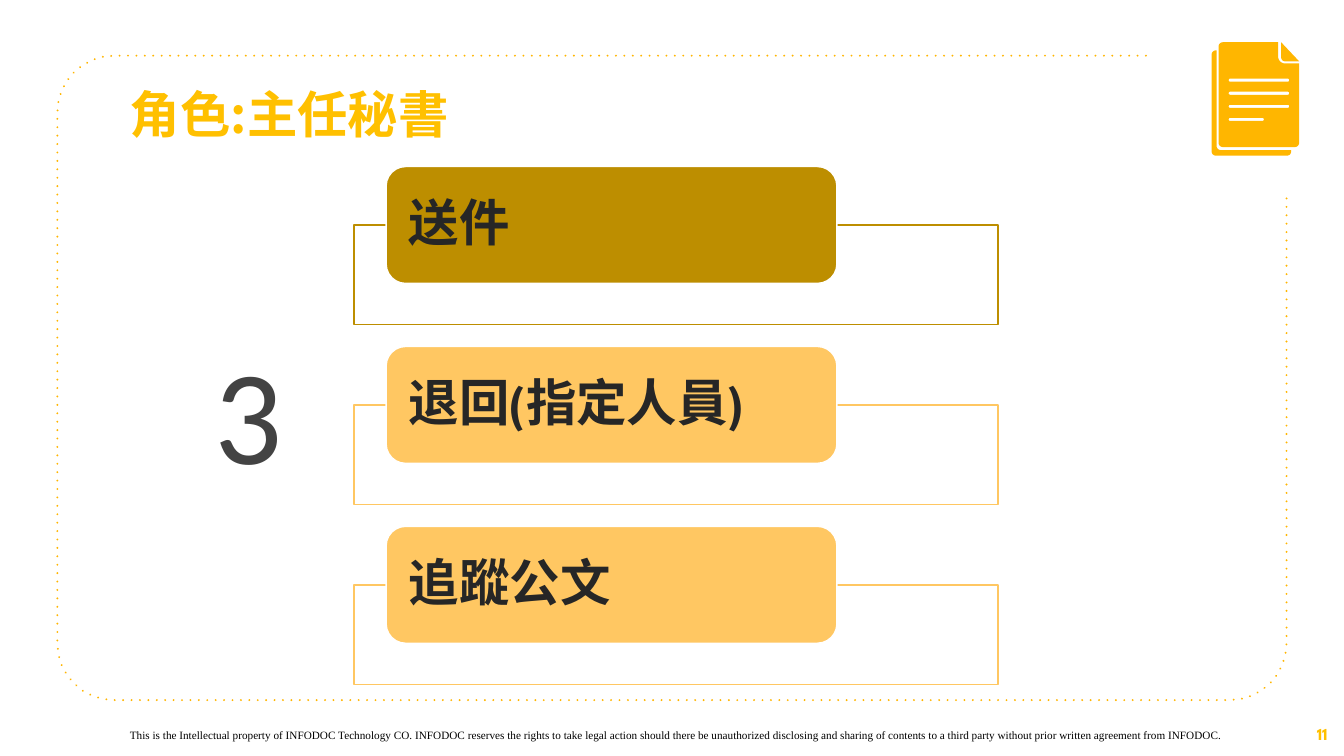
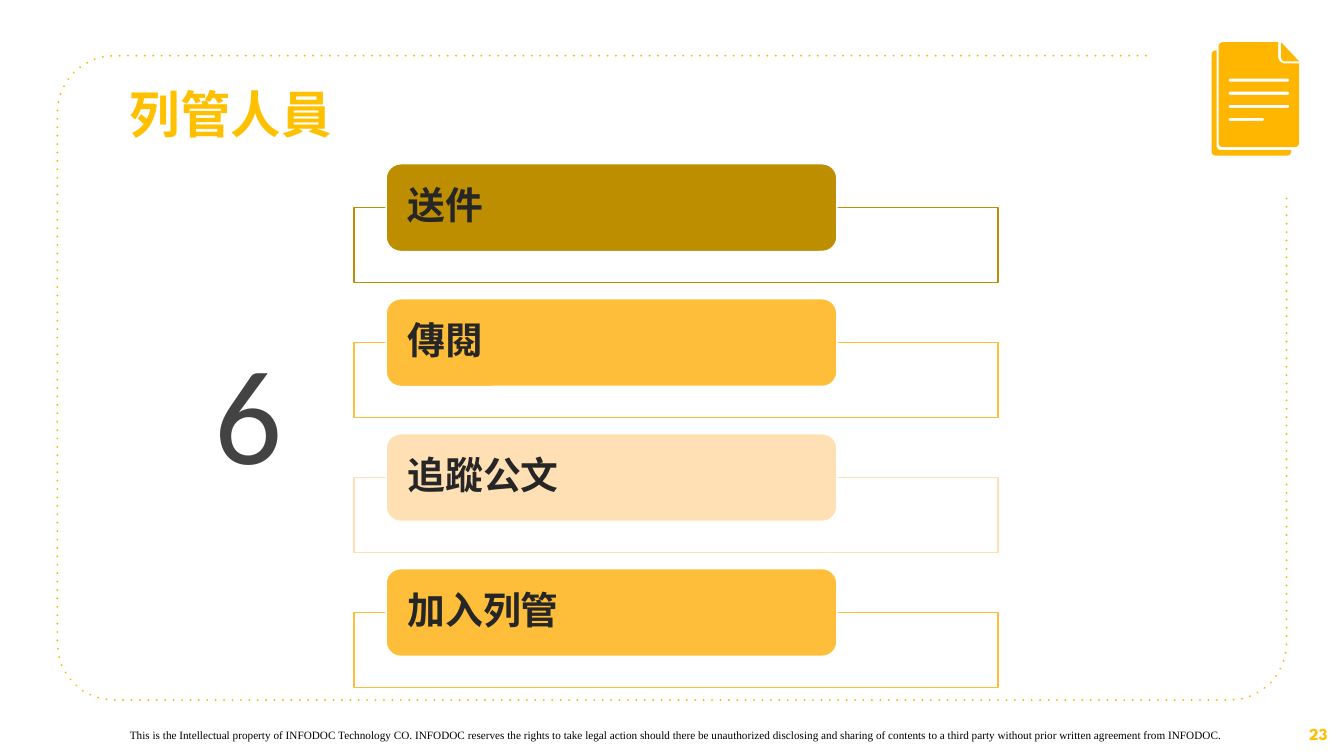
import math
from dataclasses import dataclass

from lxml import etree
from pptx import Presentation
from pptx.dml.color import RGBColor
from pptx.enum.shapes import MSO_SHAPE
from pptx.enum.text import MSO_ANCHOR, PP_ALIGN
from pptx.oxml.ns import qn
from pptx.util import Pt

RECTANGLE = MSO_SHAPE.RECTANGLE
ROUNDED = MSO_SHAPE.ROUNDED_RECTANGLE
TOP, MIDDLE = MSO_ANCHOR.TOP, MSO_ANCHOR.MIDDLE
LEFT, CENTER, RIGHT = PP_ALIGN.LEFT, PP_ALIGN.CENTER, PP_ALIGN.RIGHT


@dataclass(frozen=True)
class Theme:
    accent: str = "FFB600"
    title: str = "FFC000"
    white: str = "FFFFFF"
    black: str = "000000"
    ink: str = "262626"
    grey: str = "434343"
    dark_gold: str = "BD8E00"
    gold: str = "FFBE39"
    light_gold: str = "FFC762"
    cream: str = "FFE0B4"
    heading_font: str = "Noto Sans CJK SC"
    card_font: str = "League Spartan"
    count_font: str = "Calibri"
    footer_font: str = "Times New Roman"
    title_size: float = 36
    count_size: float = 96
    page_size: float = 12
    footer_size: float = 8


THEME = Theme()
SLIDE_SIZE = (960, 540)

# Boxes: left, top, width, height in points
FRAME_BOX = (41, 39.8, 878, 460.3)
ICON_BOX = (865.5, 30.2, 62.5, 81)
TITLE_BOX = (85.7, 60.5, 380, 53.3)
COUNT_BOX = (139.7, 220.3, 75.6, 146.2)
STACK_BOX = (252.8, 116, 460, 376)
FOOTER_BOX = (85.7, 517, 800, 17.3)
PAGE_BOX = (739.5, 509.8, 216, 28.8)

FOOTER = ("This is the Intellectual property of INFODOC Technology CO. INFODOC reserves "
          "the rights to take legal action should there be unauthorized disclosing and "
          "sharing of contents to a third party without prior written agreement from INFODOC.")

# Page number, title, count, card text size, cards
SLIDES = [
    ("11", "角色:主任秘書", "3", 36, [
        ("送件", THEME.dark_gold),
        ("退回(指定人員)", THEME.light_gold),
        ("追蹤公文", THEME.light_gold),
    ]),
    ("23", "列管人員", "6", 27, [
        ("送件", THEME.dark_gold),
        ("傳閱", THEME.gold),
        ("追蹤公文", THEME.cream),
        ("加入列管", THEME.gold),
    ]),
]


def rgb(colour):
    return RGBColor.from_string(colour)


def points(*lengths):
    return [Pt(length) for length in lengths]


# Text
def write(shape, text, size, font, colour, bold=False, align=LEFT,
          anchor=TOP, spacing=None, margins=(7.2, 3.6)):
    frame = shape.text_frame
    frame.word_wrap = True
    frame.vertical_anchor = anchor
    frame.margin_left = frame.margin_right = Pt(margins[0])
    frame.margin_top = frame.margin_bottom = Pt(margins[1])
    paragraph = frame.paragraphs[0]
    paragraph.alignment = align
    if spacing:
        paragraph.line_spacing = spacing
    run = paragraph.add_run()
    run.text = text
    run.font.size = Pt(size)
    run.font.bold = bold
    run.font.name = font
    run.font.color.rgb = rgb(colour)
    east_asian = etree.SubElement(run.font._element, qn("a:ea"))
    east_asian.set("typeface", THEME.heading_font)


def add_label(slide, box, *args, **options):
    write(slide.shapes.add_textbox(*points(*box)), *args, **options)


# Outlines
def round_corners(corners):
    """Replace each right-angled corner (x, y, radius) by a short arc."""
    outline = []
    for index, (x, y, radius) in enumerate(corners):
        if not radius:
            outline.append((x, y))
            continue
        directions = []
        for other in (corners[index - 1], corners[(index + 1) % len(corners)]):
            length = math.hypot(other[0] - x, other[1] - y)
            directions.append(((other[0] - x) / length, (other[1] - y) / length))
        (back_x, back_y), (next_x, next_y) = directions
        for step in range(9):
            angle = math.pi / 2 * step / 8
            back, ahead = 1 - math.sin(angle), 1 - math.cos(angle)
            outline.append((x + radius * (back * back_x + ahead * next_x),
                            y + radius * (back * back_y + ahead * next_y)))
    return outline


def add_outline(shapes, origin, contours, close=True):
    left, top = origin
    builder = None
    for corners in contours:
        outline = [points(left + x, top + y) for x, y in round_corners(corners)]
        if builder is None:
            builder = shapes.build_freeform(*outline[0], scale=1.0)
        else:
            builder.move_to(*outline[0])
        builder.add_line_segments(outline[1:], close=close)
    shape = builder.convert_to_shape()
    shape.shadow.inherit = False
    return shape


# Dotted frame, open at the top right
def add_frame(slide, box):
    left, top, width, height = box
    radius = 40.5
    corners = [(777.6, 0, 0), (0, 0, radius), (0, height, radius),
               (width, height, radius), (width, 100.6, 0)]
    shape = add_outline(slide.shapes, (left, top), [corners], close=False)
    shape.fill.background()
    shape.line.color.rgb = rgb(THEME.accent)
    shape.line.width = Pt(1.5)
    line = shape._element.spPr.find(qn("a:ln"))
    line.set("cap", "rnd")
    etree.SubElement(line, qn("a:prstDash")).set("val", "dot")


# Document icon: back sheet, front sheet with text lines cut out, folded corner
def add_document_icon(slide, box):
    left, top, width, height = box
    group = slide.shapes.add_group_shape()
    back = [(0, 5.8, 3), (0, height, 3), (56.8, height, 3),
            (56.8, 77, 0), (3.5, 77, 3), (3.5, 5.8, 0)]
    front = [(5, 0, 3), (5, 74.9, 3), (width, 74.9, 3),
             (width, 15.2, 0), (47.5, 15.2, 5), (47.5, 0, 0)]
    fold = [(49.6, 0, 0), (49.6, 13.7, 3), (width, 13.7, 0)]
    text_lines = []
    for index, end in enumerate((55.4, 55.4, 55.4, 37.3)):
        y = 26 + 9.35 * index
        text_lines.append([(12.2, y, 1), (end, y, 1),
                           (end, y + 2.2, 1), (12.2, y + 2.2, 1)])
    for contours in ([back], [front, *text_lines], [fold]):
        shape = add_outline(group.shapes, (left, top), contours)
        shape.fill.solid()
        shape.fill.fore_color.rgb = rgb(THEME.accent)
        shape.line.fill.background()


def add_panel(slide, kind, box, fill, line):
    shape = slide.shapes.add_shape(kind, *points(*box))
    shape.shadow.inherit = False
    shape.fill.solid()
    shape.fill.fore_color.rgb = rgb(fill)
    shape.line.color.rgb = rgb(line)
    shape.line.width = Pt(1)
    return shape


# Stack of cards, scaled by text size and centred in its box
def add_card_stack(slide, box, size, cards):
    left, top, width, height = box
    header_height, body_height, pitch = 2.32 * size, 1.98 * size, 3.57 * size
    stack_height = pitch * (len(cards) - 1) + header_height / 2 + body_height
    first = top + (height - stack_height) / 2
    for index, (text, colour) in enumerate(cards):
        y = first + index * pitch
        body = add_panel(slide, RECTANGLE,
                         (left, y + header_height / 2, width, body_height),
                         THEME.white, colour)
        fill_colour = body._element.spPr.find(qn("a:solidFill"))[0]
        etree.SubElement(fill_colour, qn("a:alpha")).set("val", "90000")
        header = add_panel(slide, ROUNDED,
                           (left + width * 0.05, y, width * 0.7, header_height),
                           colour, THEME.white)
        write(header, text, size, THEME.card_font, THEME.ink, bold=True,
              anchor=MIDDLE, spacing=0.9, margins=(12.2, 0))


def add_role_slide(presentation, page, title, count, card_size, cards):
    slide = presentation.slides.add_slide(presentation.slide_layouts[6])
    # Shared decoration and footer
    add_frame(slide, FRAME_BOX)
    add_label(slide, FOOTER_BOX, FOOTER, THEME.footer_size, THEME.footer_font, THEME.black)
    add_document_icon(slide, ICON_BOX)
    add_label(slide, PAGE_BOX, page, THEME.page_size, THEME.card_font, THEME.title,
              bold=True, align=RIGHT, anchor=MIDDLE)
    # Content
    add_label(slide, TITLE_BOX, title, THEME.title_size, THEME.heading_font, THEME.title,
              bold=True, spacing=0.9)
    add_card_stack(slide, STACK_BOX, card_size, cards)
    add_label(slide, COUNT_BOX, count, THEME.count_size, THEME.count_font, THEME.grey,
              align=CENTER, anchor=MIDDLE, margins=(7.2, 7.2))


def main():
    presentation = Presentation()
    presentation.slide_width, presentation.slide_height = points(*SLIDE_SIZE)
    for content in SLIDES:
        add_role_slide(presentation, *content)
    presentation.save("out.pptx")


if __name__ == "__main__":
    main()
